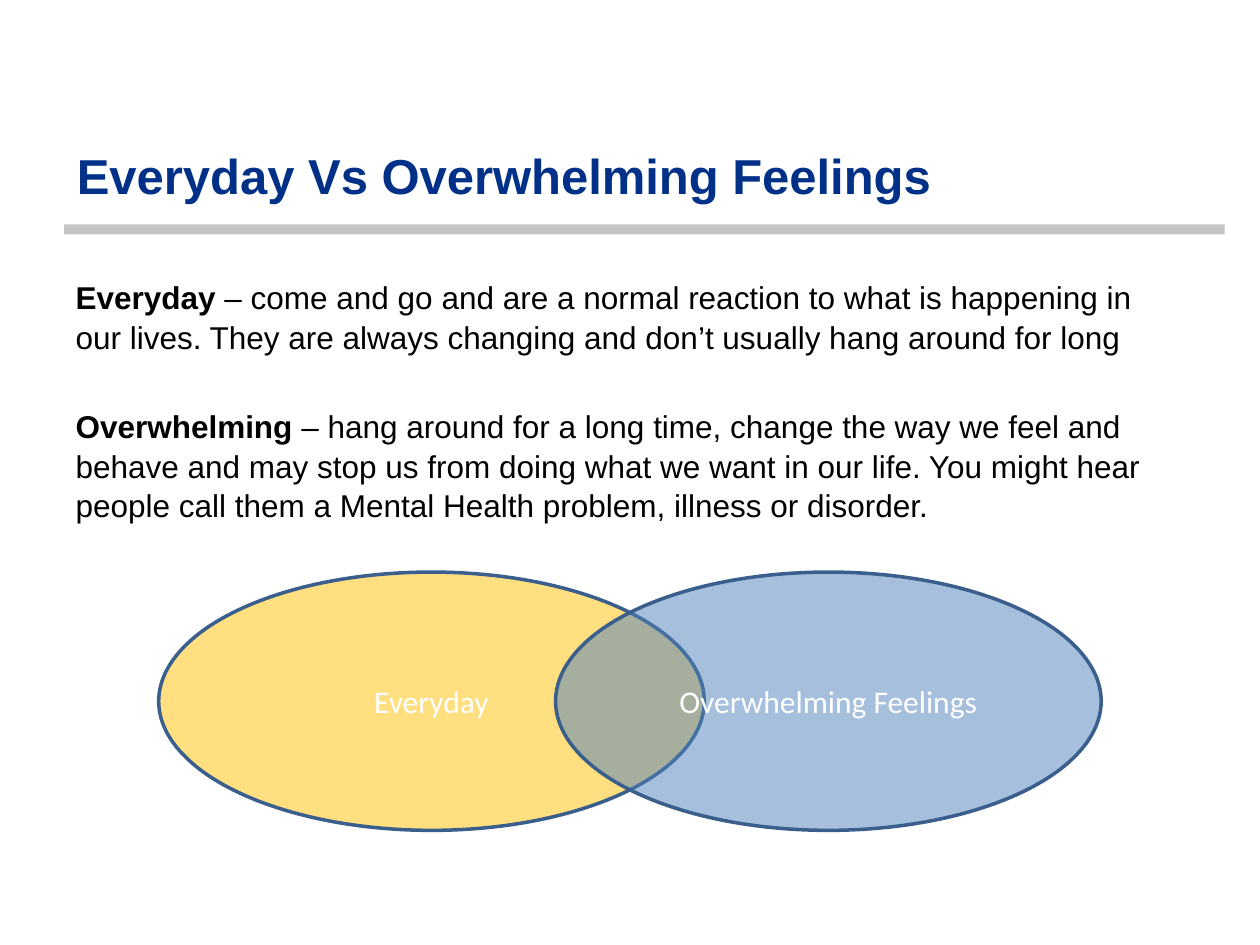
from pptx import Presentation
from pptx.dml.color import RGBColor
from pptx.enum.shapes import MSO_SHAPE as Shape
from pptx.enum.text import MSO_ANCHOR as Anchor, MSO_AUTO_SIZE as AutoSize, PP_ALIGN as Align
from pptx.oxml.ns import qn
from pptx.util import Inches, Pt
from lxml.etree import SubElement

COLORS = {
    "title": "003087", "text": "000000", "bar": "BFBFBF", "outline": "3A5F8C",
    "everyday": "FFC000", "overwhelming": "4F81BD", "label": "FFFFFF",
}
FORMATS = {
    "title": {"name": "Arial", "size": Pt(28), "bold": True},
    "text": {"name": "Arial", "size": Pt(18), "bold": False},
    "label": {"name": "Calibri", "size": Pt(18), "bold": False},
}
DEFINITIONS = [
    ("Everyday ", "– come and go and are a normal reaction to what is happening in our lives. "
     "They are always changing and don’t usually hang around for long"),
    ("Overwhelming ", "– hang around for a long time, change the way we feel and behave and may stop us "
     "from doing what we want in our life. You might hear people call them a Mental Health "
     "problem, illness or disorder."),
]


class FeelingsSlide:
    """Style and current slide, with a method for each kind of element."""

    def __init__(self, presentation):
        self.slide = presentation.slides.add_slide(presentation.slide_layouts[1])

    def place(self, shape, box, anchor):
        for name, value in zip(("left", "top", "width", "height"), box):
            setattr(shape, name, Inches(value))
        frame = shape.text_frame
        frame.word_wrap = True
        frame.auto_size = AutoSize.NONE
        frame.vertical_anchor = anchor
        return frame

    def add_text(self, paragraph, text, style, **changes):
        run = paragraph.add_run()
        run.text = text
        for name, value in {**FORMATS[style], **changes}.items():
            setattr(run.font, name, value)
        run.font.color.rgb = RGBColor.from_string(COLORS[style])

    def title(self, text, box):
        frame = self.place(self.slide.shapes.title, box, Anchor.MIDDLE)
        paragraph = frame.paragraphs[0]
        paragraph.alignment = Align.LEFT
        self.add_text(paragraph, text, "title")

    def definitions(self, items, box):
        frame = self.place(self.slide.placeholders[1], box, Anchor.TOP)
        for index, (term, meaning) in enumerate(items):
            paragraph = frame.add_paragraph() if index else frame.paragraphs[0]
            properties = paragraph._p.get_or_add_pPr()
            properties.set("marL", "0")
            properties.set("indent", "0")
            SubElement(properties, qn("a:buNone"))
            paragraph.line_spacing = 1.05
            paragraph.space_before = Pt(28.5 if index else 0)
            self.add_text(paragraph, term, "text", bold=True)
            self.add_text(paragraph, meaning, "text")

    def shape(self, kind, box, color, opacity):
        shape = self.slide.shapes.add_shape(kind, *map(Inches, box))
        shape.shadow.inherit = False
        shape.fill.solid()
        shape.fill.fore_color.rgb = RGBColor.from_string(COLORS[color])
        fill_color = shape._element.spPr.find(qn("a:solidFill"))[0]
        SubElement(fill_color, qn("a:alpha"), val=str(opacity * 1000))
        return shape

    def bar(self, box):
        self.shape(Shape.RECTANGLE, box, "bar", 90).line.fill.background()

    def ellipse(self, text, box, color):
        shape = self.shape(Shape.OVAL, box, color, 50)
        shape.line.color.rgb = RGBColor.from_string(COLORS["outline"])
        shape.line.width = Pt(2)
        paragraph = self.place(shape, box, Anchor.MIDDLE).paragraphs[0]
        paragraph.alignment = Align.CENTER
        self.add_text(paragraph, text, "label")


def main():
    presentation = Presentation()
    presentation.slide_width, presentation.slide_height = Inches(10), Inches(7.5)
    page = FeelingsSlide(presentation)
    page.bar((0.51, 1.78, 9.21, 0.08))
    page.title("Everyday Vs Overwhelming Feelings", (0.51, 0.99, 9, 0.8))
    page.definitions(DEFINITIONS, (0.5, 2.14, 9, 2.24))
    ellipses = [("Everyday", "everyday"), ("Overwhelming Feelings", "overwhelming")]
    for index, (text, color) in enumerate(ellipses):
        page.ellipse(text, (1.26 + index * 3.15, 4.54, 4.33, 2.05), color)
    presentation.save("out.pptx")


if __name__ == "__main__":
    main()
